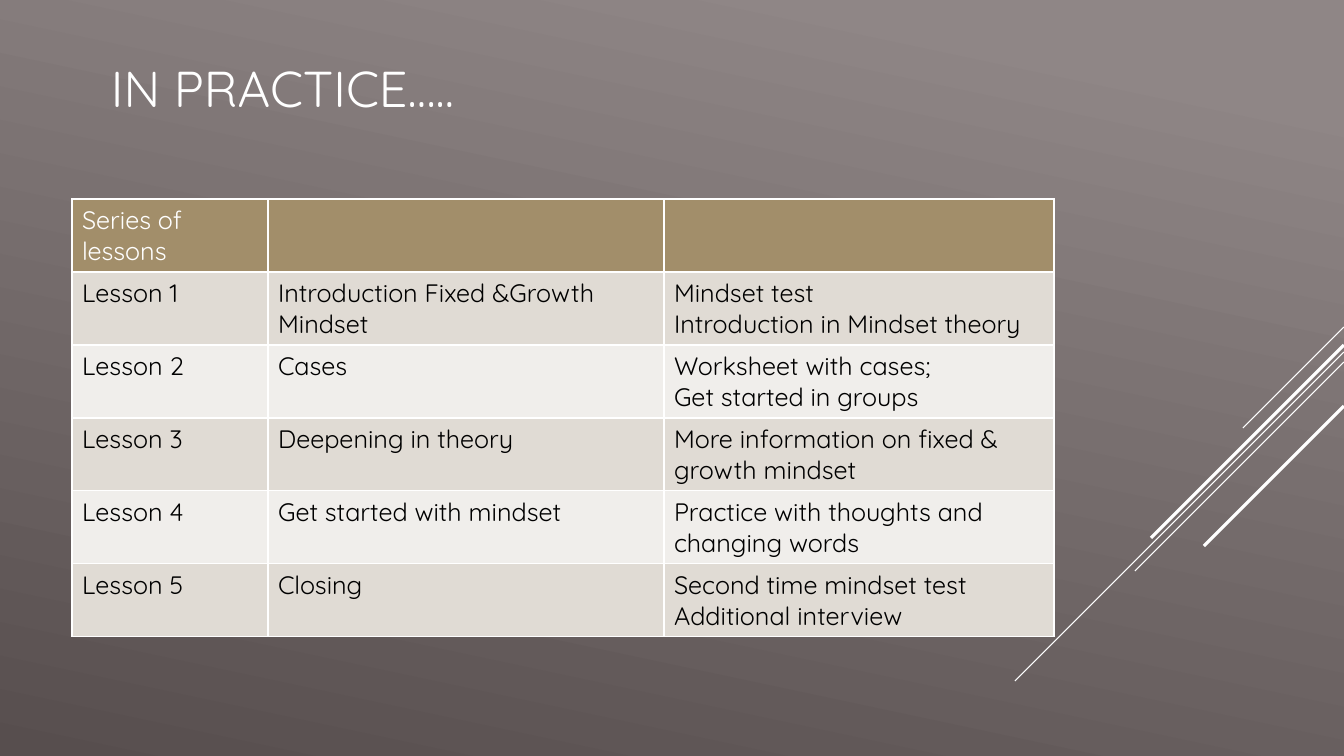
from lxml import etree
from pptx import Presentation, util as u
from pptx.dml.color import RGBColor
from pptx.enum import shapes, text
from pptx.oxml.ns import qn

# Content
TITLE = "IN PRACTICE….."
ROWS = [
    ("Series of lessons", "", ""),
    ("Lesson 1", "Introduction Fixed &Growth Mindset",
     "Mindset test\nIntroduction in Mindset theory"),
    ("Lesson 2", "Cases", "Worksheet with cases;\nGet started in groups"),
    ("Lesson 3", "Deepening in theory",
     "More information on fixed & growth mindset"),
    ("Lesson 4", "Get started with mindset",
     "Practice with thoughts and changing words"),
    ("Lesson 5", "Closing", "Second time mindset test\nAdditional interview"),
]

# Theme and layout, lengths in px
THEME = dict(font="Quicksand", white="FFFFFF", black="000000",
             head="A28E6A", bands=("F0EEEB", "E0DBD4"),
             back=((0.1, "8F8686"), (1, "574E4E")), tilt=102,
             title=36, body=18, thin=0.75, thick=2.25, edge=1)
WIDE, HIGH = 1344, 756
TITLE_BOX = (101, 4, 940, 166)
LEFT, TOP = 72, 199
COLS = (196, 396, 390)
ROW_H = 73
# Diagonals start on the right edge: y there, horizontal run, weight
RAYS = [(327, 101, "thin"), (352, 329, "thin"), (362, 209, "thin"),
        (345, 193, "thick"), (406, 140, "thick")]


def px(n):
    return u.Emu(round(n * 914400 / 100.8))


def rgb(name):
    return RGBColor.from_string(name)


def style(para, size, color):
    font = para.font
    look = dict(name=THEME["font"], size=u.Pt(size), bold=False)
    for key, val in look.items():
        setattr(font, key, val)
    font.color.rgb = rgb(color)


def edge(cell):
    props = cell._tc.get_or_add_tcPr()
    for i, side in enumerate(("lnL", "lnR", "lnT", "lnB")):
        line = etree.Element(qn("a:" + side), w=str(u.Pt(THEME["edge"])))
        fill = etree.SubElement(line, qn("a:solidFill"))
        etree.SubElement(fill, qn("a:srgbClr"), val=THEME["white"])
        props.insert(i, line)


def paint(slide):
    fill = slide.background.fill
    fill.gradient()
    fill.gradient_angle = 360 - THEME["tilt"]
    for stop, (pos, color) in zip(fill.gradient_stops, THEME["back"]):
        stop.position = pos
        stop.color.rgb = rgb(color)


def draw_rays(slide):
    for y, run, kind in RAYS:
        ray = slide.shapes.add_connector(
            shapes.MSO_CONNECTOR.STRAIGHT,
            px(WIDE), px(y), px(WIDE - run), px(y + run))
        ray.line.color.rgb = rgb(THEME["white"])
        ray.line.width = u.Pt(THEME[kind])
        etree.SubElement(ray._element.spPr, qn("a:effectLst"))


def draw_title(slide):
    frame = slide.shapes.add_textbox(*map(px, TITLE_BOX)).text_frame
    look = dict(word_wrap=True, vertical_anchor=text.MSO_ANCHOR.MIDDLE,
                text=TITLE)
    for key, val in look.items():
        setattr(frame, key, val)
    style(frame.paragraphs[0], THEME["title"], THEME["white"])


def draw_table(slide):
    box = (LEFT, TOP, sum(COLS), ROW_H * len(ROWS))
    table = slide.shapes.add_table(
        len(ROWS), len(COLS), *map(px, box)).table
    for col, wide in zip(table.columns, COLS):
        col.width = px(wide)
    for r, row in enumerate(ROWS):
        table.rows[r].height = px(ROW_H)
        back = THEME["bands"][r % 2] if r else THEME["head"]
        ink = THEME["black"] if r else THEME["white"]
        for c, words in enumerate(row):
            cell = table.cell(r, c)
            cell.text = words
            cell.fill.solid()
            cell.fill.fore_color.rgb = rgb(back)
            edge(cell)
            for para in cell.text_frame.paragraphs:
                style(para, THEME["body"], ink)


def main():
    deck = Presentation()
    deck.slide_width, deck.slide_height = px(WIDE), px(HIGH)
    slide = deck.slides.add_slide(deck.slide_layouts[6])
    for step in (paint, draw_rays, draw_title, draw_table):
        step(slide)
    deck.save("out.pptx")


if __name__ == "__main__":
    main()
